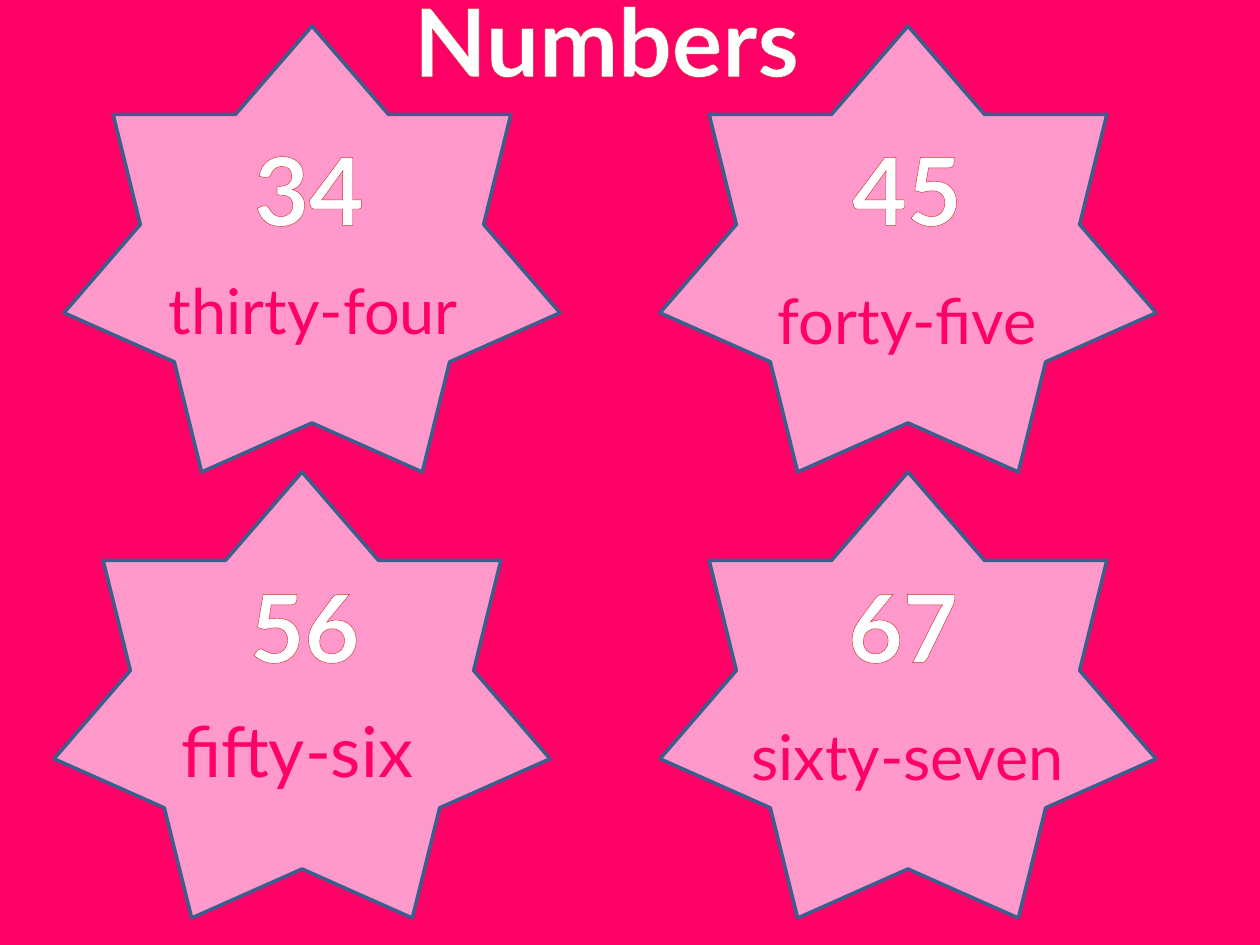
from lxml.etree import SubElement
from pptx import Presentation
from pptx.dml.color import RGBColor
from pptx.enum.shapes import MSO_SHAPE
from pptx.enum.text import MSO_ANCHOR, MSO_AUTO_SIZE, PP_ALIGN
from pptx.oxml.ns import qn
from pptx.util import Inches, Pt

PX = Inches(1) / 126
COLORS = {
    "background": "FF0066",
    "star": "FF99CC",
    "star_edge": "3A5F8C",
    "numeral": "FFFFFF",
    "numeral_edge": "D02F2A",
    "word": "FF0066",
}
STAR_SIZE = (496, 446)
NUMERAL_HEIGHT = 127

# Star corner, numeral with its box, word with its box and size
NUMBERS = [
    ((64, 26), "34", (215, 125, 188), "thirty-four", (105, 265, 417, 165), 36),
    ((660, 26), "45", (813, 125, 188), "forty-five", (719, 275, 377, 165), 36),
    ((54, 472), "56", (212, 562, 185), "fifty-six", (123, 701, 348, 183), 40),
    ((660, 472), "67", (814, 562, 178), "sixty-seven", (709, 711, 397, 165), 36),
]


def px(*lengths):
    return [round(length * PX) for length in lengths]


def color(name):
    return RGBColor.from_string(COLORS[name])


def set_attributes(target, values):
    for name, value in values.items():
        setattr(target, name, value)


def write_text(shape, text, size, color_name, wrap, bold=False):
    frame = shape.text_frame
    frame.text = text
    set_attributes(frame, {
        "word_wrap": wrap,
        "auto_size": MSO_AUTO_SIZE.SHAPE_TO_FIT_TEXT,
        "vertical_anchor": MSO_ANCHOR.TOP,
    })
    paragraph = frame.paragraphs[0]
    paragraph.alignment = PP_ALIGN.CENTER
    font = paragraph.runs[0].font
    set_attributes(font, {"name": "Lato", "size": Pt(size), "bold": bold})
    font.color.rgb = color(color_name)
    return paragraph.runs[0]


def write_outlined(shape, text):
    run = write_text(shape, text, 54, "numeral", wrap=False, bold=True)
    properties = run.font._element
    outline = SubElement(properties, qn("a:ln"), w=str(Pt(1.93)))
    fill = SubElement(outline, qn("a:solidFill"))
    SubElement(fill, qn("a:srgbClr"), val=COLORS["numeral_edge"])
    properties.insert(0, outline)  # the outline comes before the fill


def add_star(slide, corner):
    star = slide.shapes.add_shape(MSO_SHAPE.STAR_7_POINT, *px(*corner, *STAR_SIZE))
    star.shadow.inherit = False
    star.fill.solid()
    star.fill.fore_color.rgb = color("star")
    star.line.color.rgb = color("star_edge")
    star.line.width = Pt(2)


def add_title(slide, text):
    title = slide.shapes.title
    left, top, width, height = px(362, -24, 489, NUMERAL_HEIGHT)
    set_attributes(title, {"left": left, "top": top, "width": width, "height": height})
    write_outlined(title, text)


def add_numeral(slide, text, box):
    numeral = slide.shapes.add_textbox(*px(*box, NUMERAL_HEIGHT))
    write_outlined(numeral, text)


def add_word(slide, text, box, size):
    word = slide.shapes.add_textbox(*px(*box))
    write_text(word, text, size, "word", wrap=True)


def main():
    presentation = Presentation()
    width, height = px(1260, 945)
    set_attributes(presentation, {"slide_width": width, "slide_height": height})
    slide = presentation.slides.add_slide(presentation.slide_layouts[5])
    slide.background.fill.solid()
    slide.background.fill.fore_color.rgb = color("background")

    # Heading
    add_title(slide, "Numbers")

    # One star for each number
    for corner, numeral, numeral_box, word, word_box, size in NUMBERS:
        add_star(slide, corner)
        add_numeral(slide, numeral, numeral_box)
        add_word(slide, word, word_box, size)

    presentation.save("out.pptx")


if __name__ == "__main__":
    main()
